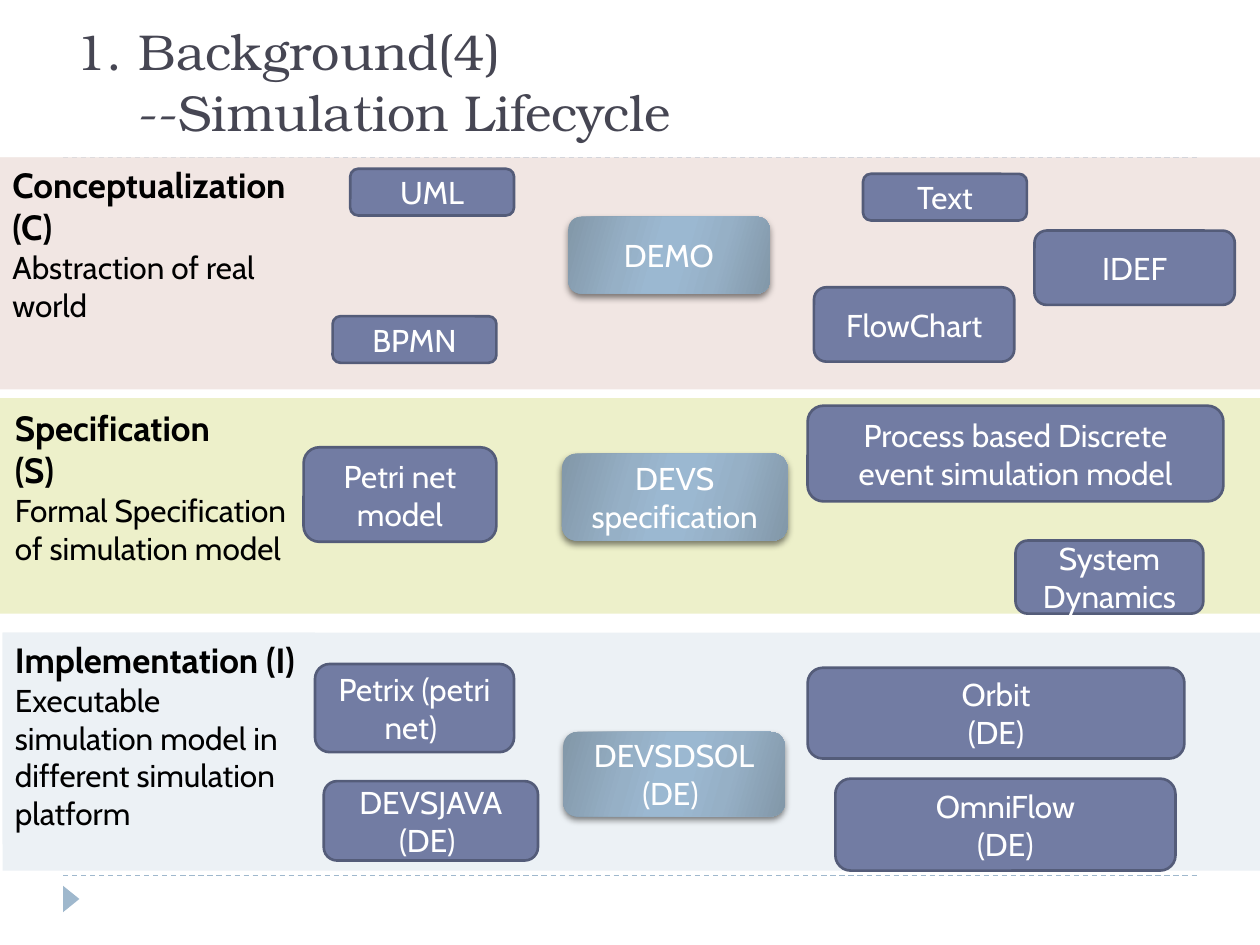
from lxml import etree
from pptx import Presentation
from pptx.dml.color import RGBColor
from pptx.enum.dml import MSO_LINE
from pptx.enum.shapes import MSO_CONNECTOR, MSO_SHAPE
from pptx.enum.text import MSO_ANCHOR, PP_ALIGN
from pptx.oxml import parse_xml
from pptx.oxml.ns import qn
from pptx.util import Inches, Pt

HEAD, BODY = "TeX Gyre Bonum", "Cabin"
NODE, EDGE, PALE = "727CA3", "545C79", "9FB8CD"
STOPS = [(0, "8297A8"), (30, "96B0C6"), (45, "9BB8D1"),
         (55, "9BB8D1"), (73, "96B0C6"), (100, "8297A8")]
NS = 'xmlns:a="http://schemas.openxmlformats.org/drawingml/2006/main"'

# Band box, colour, label offset and size, label titles, label text,
# then nodes as (text, left, top, width, height) within the band.
# The first node of each band is the highlighted one.
BANDS = [
    ((0, 1.25, 10, 1.84), "F1E6E3", (0, 0, 2.57, 1.38),
     ["Conceptualization (C)"], "Abstraction of real world",
     [("DEMO", 4.51, 0.47, 1.6, 0.61),
      ("BPMN", 2.64, 1.26, 1.3, 0.37),
      ("UML", 2.78, 0.09, 1.3, 0.37),
      ("FlowChart", 6.46, 1.03, 1.59, 0.59),
      ("Text", 6.85, 0.13, 1.3, 0.37),
      ("IDEF", 8.21, 0.58, 1.59, 0.59)]),
    ((0, 3.16, 10, 1.71), "EDF0CA", (0.02, 0.02, 2.39, 1.38),
     ["Specification", "(S)"], "Formal Specification of simulation model",
     [("DEVS\nspecification", 4.46, 0.44, 1.79, 0.69),
      ("Petri net model", 2.41, 0.39, 1.53, 0.75),
      ("Process based Discrete event simulation model", 6.41, 0.06, 3.3, 0.76),
      ("System Dynamics", 8.06, 1.13, 1.49, 0.58)]),
    ((0.02, 5.02, 9.98, 1.89), "ECF1F5", (0, 0, 2.48, 1.68),
     ["Implementation (I)"],
     "Executable simulation model in different simulation platform",
     [("DEVSDSOL\n(DE) ", 4.45, 0.79, 1.76, 0.67),
      ("Petrix (petri net) ", 2.48, 0.25, 1.58, 0.7),
      ("DEVSJAVA\n(DE) ", 2.55, 1.18, 1.7, 0.63),
      ("Orbit\n(DE)", 6.39, 0.28, 2.99, 0.72),
      ("OmniFlow\n(DE)", 6.61, 1.16, 2.7, 0.73)]),
]


def rgb(code):
    return RGBColor.from_string(code)


def inch(box):
    return [Inches(n) for n in box]


def add_box(shapes, kind, box, color):
    shape = shapes.add_shape(kind, *inch(box))
    shape.shadow.inherit = False
    shape.fill.solid()
    shape.fill.fore_color.rgb = rgb(color)
    shape.line.fill.background()
    return shape


def style(para, font, size, color, bold=False, align=PP_ALIGN.LEFT):
    para.alignment = align
    for run in para.runs:
        run.font.name = font
        run.font.size = Pt(size)
        run.font.bold = bold
        run.font.color.rgb = rgb(color)


def add_glow(shape):
    """Give a highlighted node its slanted gradient and soft shadow."""
    props = shape.fill._xPr
    stops = "".join(f'<a:gs pos="{pos * 1000}"><a:srgbClr val="{code}"/></a:gs>'
                    for pos, code in STOPS)
    grad = parse_xml(f'<a:gradFill {NS} rotWithShape="1"><a:gsLst>{stops}</a:gsLst>'
                     f'<a:lin ang="{16 * 60000}" scaled="0"/></a:gradFill>')
    props.replace(props.find(qn("a:solidFill")), grad)
    props.find(qn("a:effectLst")).append(parse_xml(
        f'<a:outerShdw {NS} blurRad="{Pt(4)}" dist="{Pt(2)}" dir="{90 * 60000}" '
        'rotWithShape="0"><a:srgbClr val="000000"><a:alpha val="50000"/>'
        '</a:srgbClr></a:outerShdw>'))


def add_node(shapes, box, text, main):
    node = add_box(shapes, MSO_SHAPE.ROUNDED_RECTANGLE, box, NODE)
    if main:
        add_glow(node)
    else:
        node.line.color.rgb = rgb(EDGE)
        node.line.width = Pt(1.5)
    frame = node.text_frame
    frame.word_wrap = True
    frame.vertical_anchor = MSO_ANCHOR.MIDDLE
    frame.text = text
    for para in frame.paragraphs:
        style(para, BODY, 18, "FFFFFF", align=PP_ALIGN.CENTER)


def add_label(shapes, box, color, heads, text):
    label = add_box(shapes, MSO_SHAPE.RECTANGLE, box, color)
    frame = label.text_frame
    frame.word_wrap = True
    frame.vertical_anchor = MSO_ANCHOR.TOP
    frame.text = "\n".join(heads + [text])
    *tops, last = frame.paragraphs
    for para in tops:
        style(para, BODY, 20, "000000", bold=True)
    style(last, BODY, 18, "000000")


def add_band(slide, box, color, spot, heads, text, nodes):
    left, top = box[:2]

    def place(x, y, *size):
        return (left + x, top + y, *size)

    group = slide.shapes.add_group_shape().shapes
    add_box(group, MSO_SHAPE.RECTANGLE, box, color)
    add_label(group, place(*spot), color, heads, text)
    for i, (name, *part) in enumerate(nodes):
        add_node(slide.shapes, place(*part), name, main=i == 0)


def add_rule(slide, left, top, width):
    rule = slide.shapes.add_connector(
        MSO_CONNECTOR.STRAIGHT, *inch((left, top, left + width, top)))
    rule.line.color.rgb = rgb(PALE)
    rule.line.width = Pt(0.75)
    rule.line.dash_style = MSO_LINE.DASH
    etree.SubElement(rule._element.spPr, qn("a:effectLst"))


def add_frame(slide, left, top, width, height):
    """Draw the dashed rules above and below the bands, and the corner mark."""
    for y in (top + height, top):
        add_rule(slide, left, y, width)
    mark = add_box(slide.shapes, MSO_SHAPE.ISOSCELES_TRIANGLE,
                   (left - 0.04, top + height + 0.12, 0.21, 0.13), PALE)
    mark.rotation = 90


def add_title(slide, box):
    frame = slide.shapes.add_textbox(*inch(box)).text_frame
    frame.word_wrap = True
    frame.vertical_anchor = MSO_ANCHOR.BOTTOM
    frame.text = "1. Background(4)\n--Simulation Lifecycle"
    for para in frame.paragraphs:
        style(para, HEAD, 28.8, "464653")
    frame.paragraphs[1]._p.get_or_add_pPr().set("marL", str(Inches(0.5)))


def main():
    deck = Presentation()
    deck.slide_width, deck.slide_height = Inches(10), Inches(7.5)
    slide = deck.slides.add_slide(deck.slide_layouts[6])
    add_frame(slide, 0.5, 1.25, 9, 5.7)
    add_title(slide, (0.5, 0.17, 9, 1))
    for band in BANDS:
        add_band(slide, *band)
    deck.save("out.pptx")


if __name__ == "__main__":
    main()
